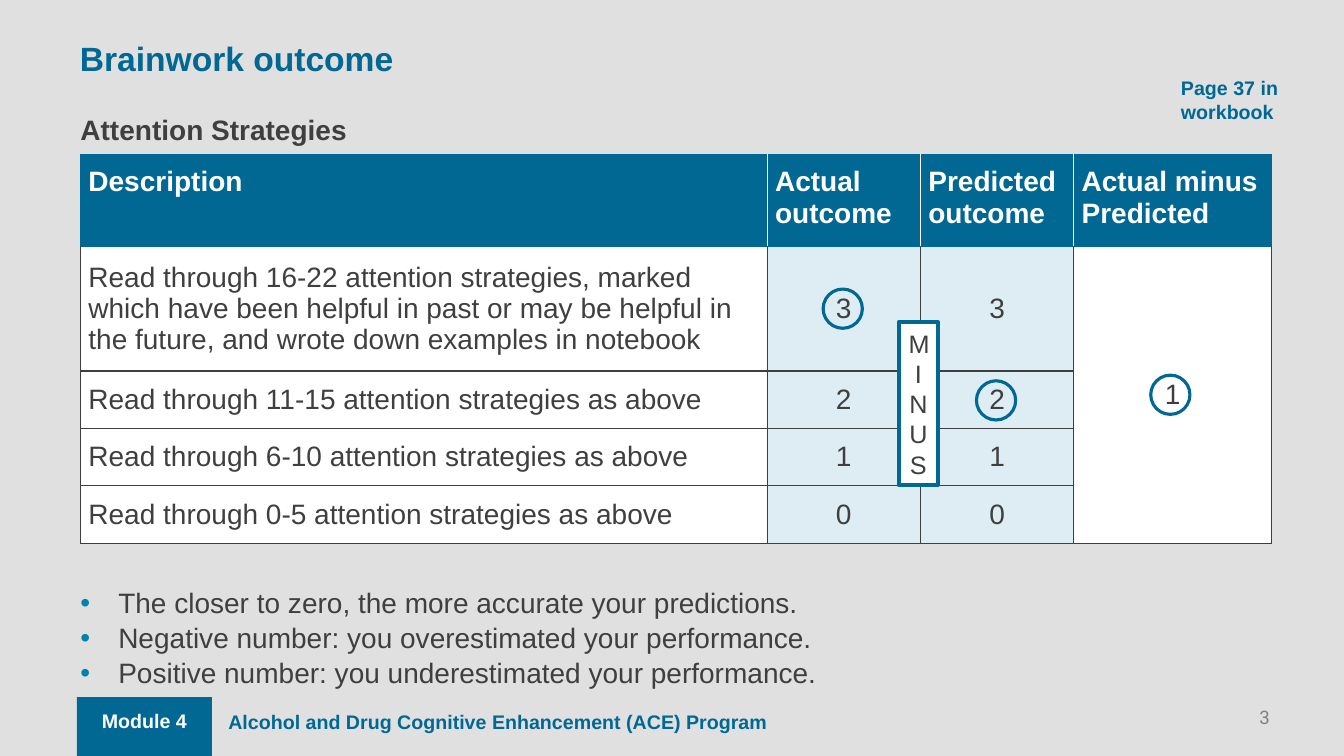
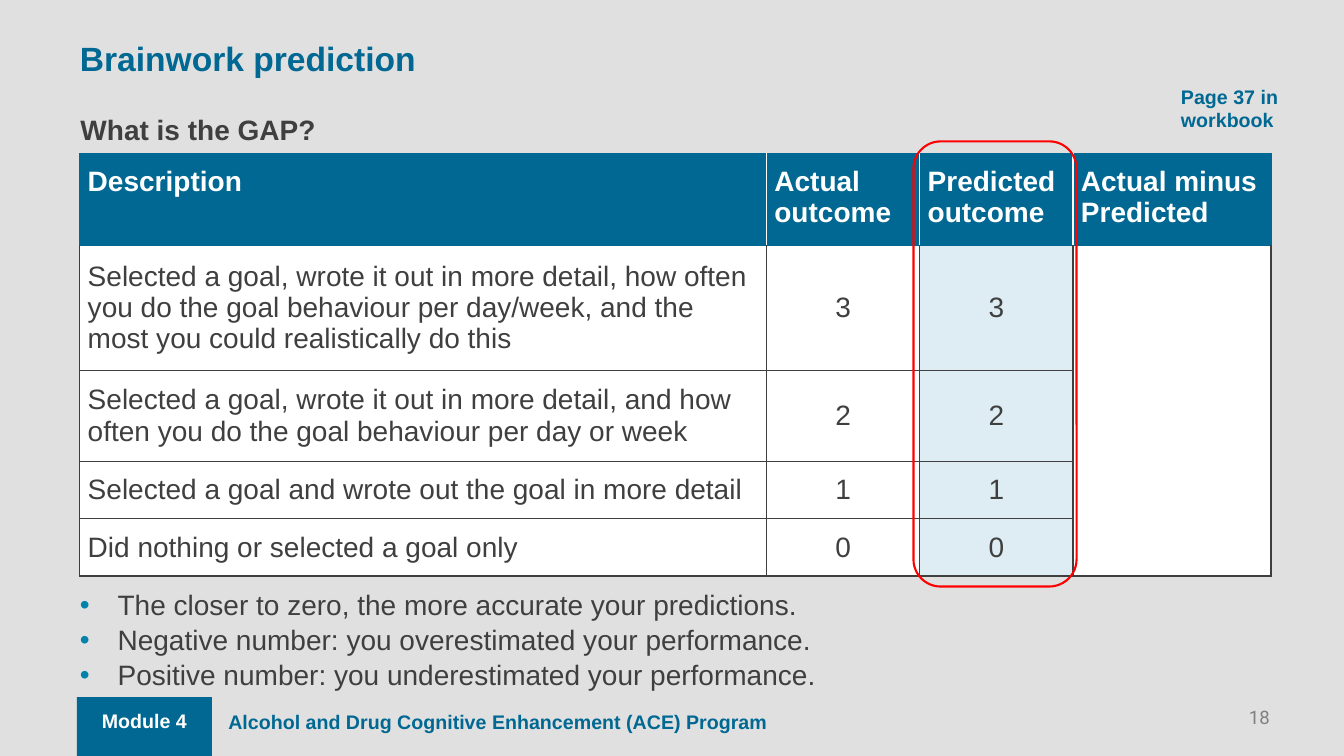
from lxml import etree
from pptx import Presentation
from pptx.dml.color import RGBColor
from pptx.enum import shapes, text
from pptx.oxml import ns
from pptx.util import Pt

COLORS = {
    "teal": "006892", "bullet": "0082AA", "ink": "3F3F3F", "white": "FFFFFF",
    "pale": "DEEDF3", "grey": "808080", "red": "FF0000", "background": "E0E0E0",
}
RGB = {name: RGBColor.from_string(value) for name, value in COLORS.items()}
LEFT, MIDDLE = 57, text.MSO_ANCHOR.MIDDLE
CENTER, RIGHT = text.PP_ALIGN.CENTER, text.PP_ALIGN.RIGHT
DEFAULT_INSETS, NO_INSETS = (7.2, 3.6, 7.2, 3.6), (0, 0, 0, 0)

COLUMN_WIDTHS = [490.5, 109.5, 109.5, 141.5]
HEADINGS = ["Description", "Actual outcome", "Predicted outcome", "Actual minus Predicted"]
SCORES = ["3", "2", "1", "0"]
TAKEAWAYS = [
    "The closer to zero, the more accurate your predictions.",
    "Negative number: you overestimated your performance.",
    "Positive number: you underestimated your performance.",
]

# What differs between the slides
SLIDES = [
    {
        "title": "Brainwork outcome", "subtitle": "Attention Strategies", "number": "3",
        "page_top": 51, "table_at": (57.5, 110.5), "takeaways_top": 417.5,
        "row_heights": [65.5, 89, 41, 41, 41], "pale_columns": [1, 2], "gap": "1",
        "descriptions": [
            "Read through 16-22 attention strategies, marked which have been helpful in past "
            "or may be helpful in the future, and wrote down examples in notebook",
            "Read through 11-15 attention strategies as above",
            "Read through 6-10 attention strategies as above",
            "Read through 0-5 attention strategies as above",
        ],
        # Outlined marks: preset, box, line colour, line width, fill, wording
        "marks": [
            (shapes.MSO_SHAPE.OVAL, (697.5, 272, 28, 28), "teal", 2.25, None, ""),
            (shapes.MSO_SHAPE.OVAL, (588, 206.5, 28, 28), "teal", 2.25, None, ""),
            (shapes.MSO_SHAPE.RECTANGLE, (642, 230, 28, 116.5), "teal", 2.75, "white", "MINUS"),
            (shapes.MSO_SHAPE.OVAL, (822, 268, 28, 28), "teal", 2.25, None, ""),
        ],
    },
    {
        "title": "Brainwork prediction", "subtitle": "What is the GAP?", "number": "18",
        "page_top": 57, "table_at": (57, 110), "takeaways_top": 419,
        "row_heights": [65.5, 89, 65, 41, 41], "pale_columns": [2], "gap": "",
        "descriptions": [
            "Selected a goal, wrote it out in more detail, how often you do the goal behaviour "
            "per day/week, and the most you could realistically do this",
            "Selected a goal, wrote it out in more detail, and how often you do the goal "
            "behaviour per day or week",
            "Selected a goal and wrote out the goal in more detail",
            "Did nothing or selected a goal only",
        ],
        "marks": [
            (shapes.MSO_SHAPE.ROUNDED_RECTANGLE, (652.5, 101, 116.5, 318), "red", 1.5, None, ""),
        ],
    },
]


def write(frame, lines, size, color, bold=False, align=None, font="Arial"):
    """Fill a text frame with equally styled paragraphs."""
    frame.word_wrap = True
    frame.text = "\n".join(lines)
    for paragraph in frame.paragraphs:
        paragraph.alignment = align
        paragraph.font.size, paragraph.font.name = Pt(size), font
        paragraph.font.bold, paragraph.font.color.rgb = bold, RGB[color]


def add_text(slide, box, lines, *style, insets=DEFAULT_INSETS, **options):
    """Add a text box at box (left, top, width, height)."""
    frame = slide.shapes.add_textbox(*map(Pt, box)).text_frame
    write(frame, lines, *style, **options)
    (frame.margin_left, frame.margin_top,
     frame.margin_right, frame.margin_bottom) = map(Pt, insets)
    return frame


prs = Presentation()
prs.slide_width, prs.slide_height = Pt(960), Pt(540)
master_fill = prs.slide_master.background.fill
master_fill.solid()
master_fill.fore_color.rgb = RGB["background"]

for content in SLIDES:
    slide = prs.slides.add_slide(prs.slide_layouts[6])

    # Footer band
    module_tab = slide.shapes.add_shape(
        shapes.MSO_SHAPE.RECTANGLE, Pt(55), Pt(498), Pt(96.5), Pt(43))
    module_tab.shadow.inherit = False
    module_tab.fill.solid()
    module_tab.fill.fore_color.rgb = RGB["teal"]
    module_tab.line.fill.background()
    add_text(slide, (156, 503.5, 802, 34),
             ["Alcohol and Drug Cognitive Enhancement (ACE) Program"], 14, "teal", True)
    add_text(slide, (55, 502.5, 96.5, 24.5), ["Module 4"], 14, "white", True, CENTER)
    add_text(slide, (763, 504.5, 144, 14.5), [content["number"]], 13.3, "grey",
             align=RIGHT, font="Roboto", insets=NO_INSETS)

    # Headings
    title = add_text(slide, (LEFT, 24.5, 642, 34), [content["title"]], 24, "teal", True,
                     insets=NO_INSETS)
    title.vertical_anchor = MIDDLE
    add_text(slide, (57.5, 77, 297, 31.5), [content["subtitle"]], 20, "ink", True,
             insets=(0, 3.6, 7.2, 3.6))
    add_text(slide, (836.5, content["page_top"], 99.5, 41), ["Page 37 in workbook"],
             14, "teal", True)

    # Score table
    heights = content["row_heights"]
    scores = slide.shapes.add_table(
        len(heights), len(COLUMN_WIDTHS), *map(Pt, content["table_at"]),
        Pt(sum(COLUMN_WIDTHS)), Pt(sum(heights))).table
    scores.horz_banding = False
    for column, width in zip(scores.columns, COLUMN_WIDTHS):
        column.width = Pt(width)
    for row, height in zip(scores.rows, heights):
        row.height = Pt(height)
    scores.cell(1, 3).merge(scores.cell(4, 3))

    rows = [HEADINGS] + [[description, score, score, ""] for description, score
                         in zip(content["descriptions"], SCORES)]
    rows[1][3] = content["gap"]
    last = len(COLUMN_WIDTHS) - 1
    for r, row in enumerate(rows):
        for c, wording in enumerate(row):
            cell = scores.cell(r, c)
            header = r == 0
            if header:
                edges = {"lnL": "white" if c > 0 else "teal",
                         "lnR": "white" if c < last else "teal",
                         "lnT": "teal", "lnB": "teal"}
                fill = "teal"
            else:
                edges = dict.fromkeys(("lnL", "lnR", "lnT", "lnB"), "ink")
                if r == 1:
                    edges["lnT"] = "teal"
                fill = "pale" if c in content["pale_columns"] else "white"
                cell.vertical_anchor = MIDDLE
            cell.margin_left = cell.margin_right = Pt(5.67)
            cell.margin_top = cell.margin_bottom = Pt(8.5)
            cell_properties = cell._tc.get_or_add_tcPr()
            for edge, color in edges.items():
                line = etree.SubElement(cell_properties, ns.qn(f"a:{edge}"), w=str(Pt(1)))
                solid = etree.SubElement(line, ns.qn("a:solidFill"))
                etree.SubElement(solid, ns.qn("a:srgbClr"), val=COLORS[color])
            cell.fill.solid()
            cell.fill.fore_color.rgb = RGB[fill]
            write(cell.text_frame, [wording], 20, "white" if header else "ink", header,
                  CENTER if c and not header else None)

    # Takeaways
    takeaways = add_text(slide, (content["table_at"][0], content["takeaways_top"], 850, 70),
                         TAKEAWAYS, 20, "ink", insets=NO_INSETS)
    for paragraph in takeaways.paragraphs:
        paragraph.line_spacing = 1.04
        properties = paragraph._p.get_or_add_pPr()
        properties.set("marL", str(Pt(27)))
        properties.set("indent", str(-Pt(27)))
        bullet_color = etree.Element(ns.qn("a:buClr"))
        etree.SubElement(bullet_color, ns.qn("a:srgbClr"), val=COLORS["bullet"])
        bullet_font = etree.Element(ns.qn("a:buFont"), typeface="Arial")
        bullet_char = etree.Element(ns.qn("a:buChar"), char="•")
        run_defaults = properties.find(ns.qn("a:defRPr"))
        for part in (bullet_color, bullet_font, bullet_char):
            run_defaults.addprevious(part)

    # Marks over the table
    for preset, box, line_color, line_width, fill, wording in content["marks"]:
        mark = slide.shapes.add_shape(preset, *map(Pt, box))
        mark.shadow.inherit = False
        mark.line.color.rgb, mark.line.width = RGB[line_color], Pt(line_width)
        if fill:
            mark.fill.solid()
            mark.fill.fore_color.rgb = RGB[fill]
        else:
            mark.fill.background()
        if wording:
            write(mark.text_frame, [wording], 18, "ink", align=CENTER)

prs.save("out.pptx")
